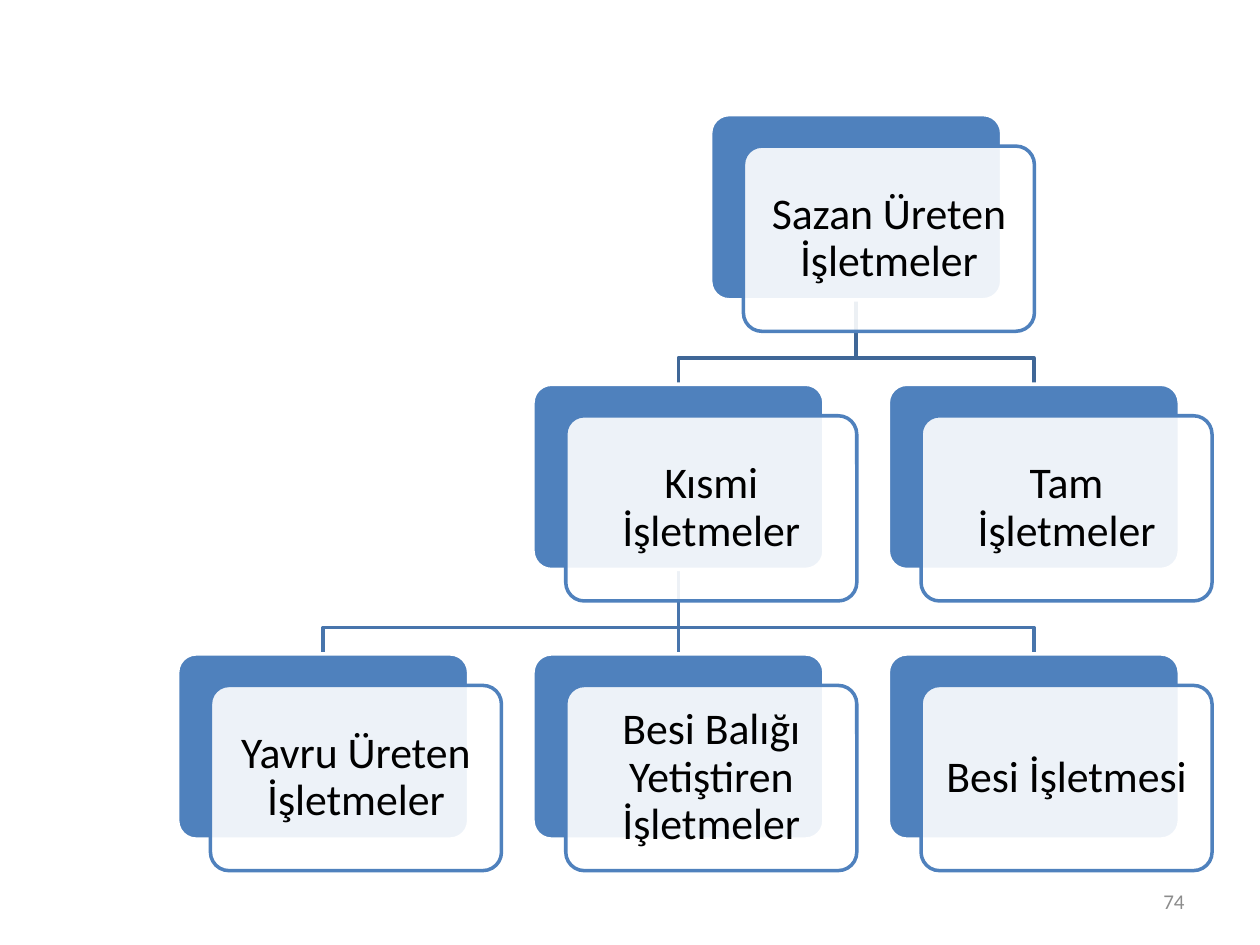
from lxml.etree import SubElement
from pptx import Presentation
from pptx.dml.color import RGBColor
from pptx.enum.shapes import MSO_CONNECTOR, MSO_SHAPE
from pptx.enum.text import MSO_ANCHOR, PP_ALIGN
from pptx.oxml.ns import qn
from pptx.util import Inches, Pt

# key: (text, column, row, parent)
NODES = {
    "root": ("Sazan Üreten İşletmeler", 1.5, 0, None),
    "part": ("Kısmi İşletmeler", 1, 1, "root"),
    "full": ("Tam İşletmeler", 2, 1, "root"),
    "fry": ("Yavru Üreten İşletmeler", 0, 2, "part"),
    "grow": ("Besi Balığı Yetiştiren İşletmeler", 1, 2, "part"),
    "feed": ("Besi İşletmesi", 2, 2, "part"),
}
NUMBER = "74"

THEME = {
    "font": "Calibri", "node": 25, "number": 12, "line": 2,
    "blue": "4F81BD", "white": "FFFFFF", "black": "000000", "gray": "8C8C8C",
    "links": ("3F6797", "4875AC"),  # by row of the parent
}

LEFT, TOP = 1.41, 0.91
STEP_X, STEP_Y = 2.82, 2.14
WIDTH, HEIGHT = 2.31, 1.47
SHIFT_X, SHIFT_Y = 0.26, 0.25
DROP = 0.46  # from the parent's lower edge to the bend


def rgb(name):
    return RGBColor.from_string(THEME.get(name, name))


def place(key):
    col, row = NODES[key][1:3]
    return LEFT + STEP_X * col, TOP + STEP_Y * row


def write(shape, text, size, color, align, space=1.0, inset=0.1):
    frame = shape.text_frame
    frame.word_wrap = True
    frame.vertical_anchor = MSO_ANCHOR.MIDDLE
    frame.margin_left = frame.margin_right = Inches(inset)
    frame.margin_top = frame.margin_bottom = Inches(inset)
    para = frame.paragraphs[0]
    para.alignment = align
    para.line_spacing = space
    run = para.add_run()
    run.text = text
    run.font.name = THEME["font"]
    run.font.size = Pt(THEME[size])
    run.font.color.rgb = rgb(color)


def stroke(shape, color):
    shape.line.color.rgb = rgb(color)
    shape.line.width = Pt(THEME["line"])


def link(slide, key):
    """Join a node to its parent, with a bend unless it is right below."""
    parent = NODES[key][3]
    (px, py), (cx, cy) = place(parent), place(key)
    x1, x2 = px + WIDTH / 2, cx + WIDTH / 2
    y1, y2 = py + HEIGHT, cy
    if x1 == x2:
        line = slide.shapes.add_connector(
            MSO_CONNECTOR.STRAIGHT, Inches(x1), Inches(y1), Inches(x2), Inches(y2))
        SubElement(line.line._get_or_add_ln().getparent(), qn("a:effectLst"))
    else:
        mid = y1 + DROP
        pen = slide.shapes.build_freeform(Inches(x1), Inches(y1))
        points = [(x1, mid), (x2, mid), (x2, y2)]
        pen.add_line_segments([(Inches(x), Inches(y)) for x, y in points], close=False)
        line = pen.convert_to_shape()
        line.fill.background()
        line.shadow.inherit = False
    stroke(line, THEME["links"][NODES[parent][2]])


def card(slide, x, y, fill, edge):
    shape = slide.shapes.add_shape(
        MSO_SHAPE.ROUNDED_RECTANGLE, Inches(x), Inches(y), Inches(WIDTH), Inches(HEIGHT))
    shape.adjustments[0] = 0.1
    shape.shadow.inherit = False
    shape.fill.solid()
    shape.fill.fore_color.rgb = rgb(fill)
    stroke(shape, edge)
    return shape


def node(slide, key):
    x, y = place(key)
    card(slide, x, y, "blue", "white")
    front = card(slide, x + SHIFT_X, y + SHIFT_Y, "white", "blue")
    color = front.fill._xPr.find(qn("a:solidFill"))[0]
    SubElement(color, qn("a:alpha"), val="90000")
    write(front, NODES[key][0], "node", "black", PP_ALIGN.CENTER, space=0.9)


def main():
    deck = Presentation()
    deck.slide_width, deck.slide_height = Inches(10), Inches(7.5)
    slide = deck.slides.add_slide(deck.slide_layouts[6])
    box = slide.shapes.add_textbox(Inches(7.17), Inches(6.95), Inches(2.33), Inches(0.4))
    write(box, NUMBER, "number", "gray", PP_ALIGN.RIGHT)
    for key in NODES:
        if NODES[key][3]:
            link(slide, key)
    for key in NODES:
        node(slide, key)
    deck.save("out.pptx")


if __name__ == "__main__":
    main()
